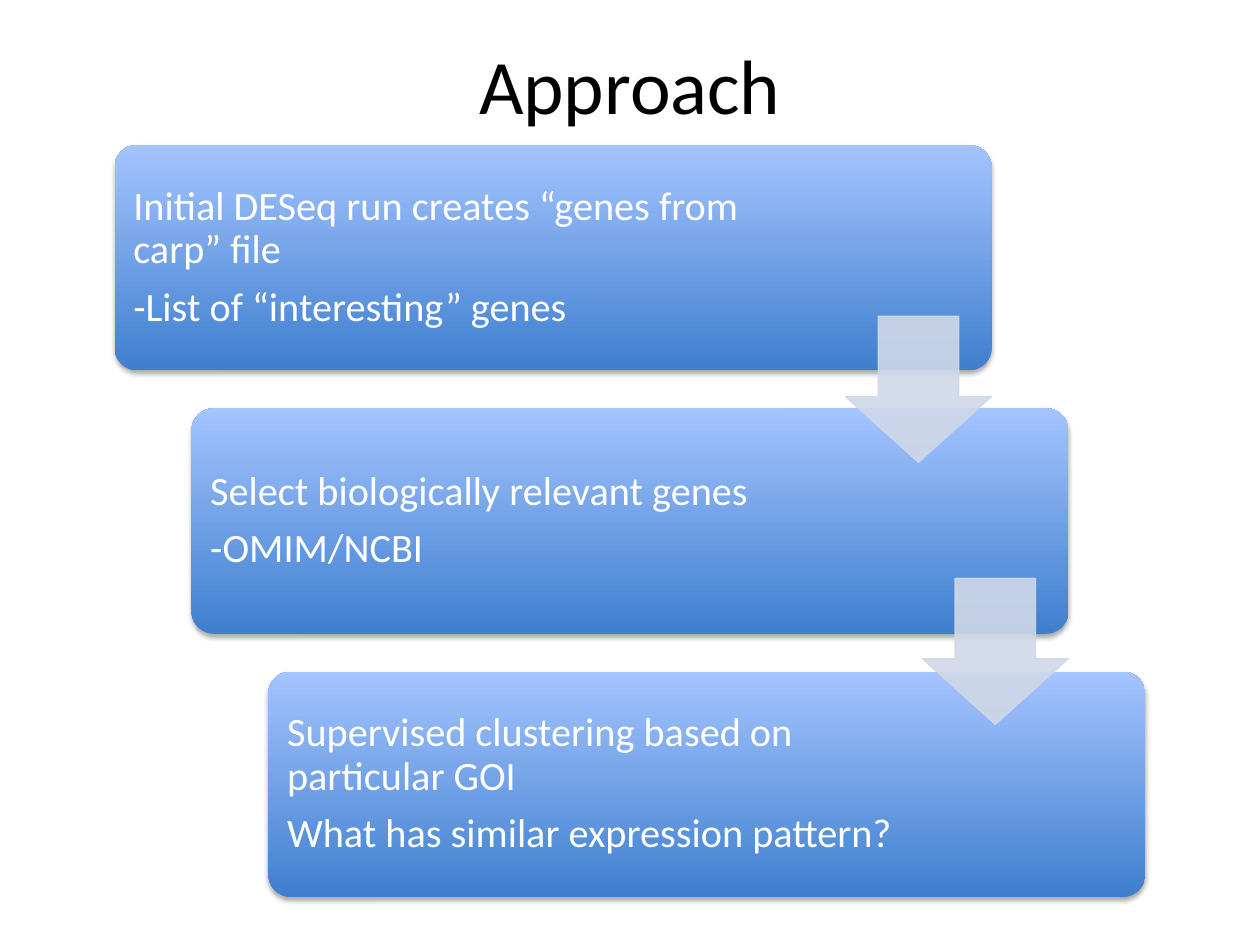
from dataclasses import dataclass

from lxml.etree import SubElement
from pptx import Presentation
from pptx.dml.color import RGBColor
from pptx.enum.shapes import MSO_SHAPE
from pptx.enum.text import MSO_ANCHOR, PP_ALIGN
from pptx.oxml.ns import qn
from pptx.util import Inches, Pt

COLORS = {
    "title": "000000",
    "text": "FFFFFF",
    "box_bottom": "3F7FCE",
    "box_top": "A4C4FF",
    "arrow": "D0D8E8",
    "shadow": "000000",
}
BOX_W, BOX_H = 6.96, 1.79
ARROW = 1.16
STEP_X, STEP_Y = 0.61, 2.09
LEFT, TOP = 0.91, 1.15


@dataclass
class Step:
    lines: list[str]
    text_w: float


STEPS = [
    Step(["Initial DESeq run creates “genes from carp” file",
          "-List of “interesting” genes"], 5.03),
    Step(["Select biologically relevant genes", "-OMIM/NCBI"], 5.08),
    Step(["Supervised clustering based on particular GOI",
          "What has similar expression pattern?"], 5.08),
]


def rgb(name: str) -> RGBColor:
    return RGBColor.from_string(COLORS[name])


def set_attrs(obj, values: dict) -> None:
    for name, value in values.items():
        setattr(obj, name, value)


def add_alpha(color, percent: int) -> None:
    SubElement(color, qn("a:alpha"), val=str(percent * 1000))


def add_text(s, x: float, y: float, w: float, h: float, lines: list[str],
             size: int, color: str, para: dict, inset: float = 0.1) -> None:
    tf = s.shapes.add_textbox(Inches(x), Inches(y), Inches(w), Inches(h)).text_frame
    set_attrs(tf, {"word_wrap": True, "vertical_anchor": MSO_ANCHOR.MIDDLE,
                   "margin_left": Inches(inset), "margin_right": Inches(inset),
                   "margin_top": Inches(inset), "margin_bottom": Inches(inset)})
    for i, line in enumerate(lines):
        p = tf.add_paragraph() if i else tf.paragraphs[0]
        set_attrs(p, para)
        r = p.add_run()
        r.text = line
        set_attrs(r.font, {"name": "Calibri", "size": Pt(size)})
        r.font.color.rgb = rgb(color)


def add_shape(s, kind: MSO_SHAPE, x: float, y: float, w: float, h: float,
              adjustments: list[float]):
    sp = s.shapes.add_shape(kind, Inches(x), Inches(y), Inches(w), Inches(h))
    sp.shadow.inherit = False
    for i, value in enumerate(adjustments):
        sp.adjustments[i] = value
    return sp


def add_step(s, step: Step, x: float, y: float) -> None:
    sp = add_shape(s, MSO_SHAPE.ROUNDED_RECTANGLE, x, y, BOX_W, BOX_H, [0.1])
    sp.line.fill.background()
    sp.fill.gradient()
    sp.fill.gradient_angle = 90
    for stop, name, position in zip(sp.fill.gradient_stops,
                                    ("box_bottom", "box_top"), (0, 1)):
        stop.color.rgb = rgb(name)
        stop.position = position
    effects = sp.element.spPr.find(qn("a:effectLst"))
    shadow = SubElement(effects, qn("a:outerShdw"), blurRad=str(Pt(3.1)),
                        dist=str(Pt(1.8)), dir="5400000", rotWithShape="0")
    add_alpha(SubElement(shadow, qn("a:srgbClr"), val=COLORS["shadow"]), 35)
    add_text(s, x + 0.05, y + 0.05, step.text_w, BOX_H - 0.1, step.lines, 23, "text",
             {"line_spacing": 0.9, "space_after": Pt(8)})


def add_arrow(s, x: float, y: float) -> None:
    sp = add_shape(s, MSO_SHAPE.DOWN_ARROW, x, y, ARROW, ARROW, [0.55, 0.45])
    sp.fill.solid()
    sp.fill.fore_color.rgb = rgb("arrow")
    sp.line.color.rgb = rgb("arrow")
    sp.line.width = Pt(0.75)
    for color in sp.element.spPr.iter(qn("a:srgbClr")):
        add_alpha(color, 90)


def main() -> None:
    prs = Presentation()
    set_attrs(prs, {"slide_width": Inches(10), "slide_height": Inches(7.5)})
    s = prs.slides.add_slide(prs.slide_layouts[6])
    add_text(s, 0.5, 0.04, 9, 1.25, ["Approach"], 44, "title",
             {"alignment": PP_ALIGN.CENTER}, inset=0.05)
    for i, step in enumerate(STEPS):
        add_step(s, step, LEFT + i * STEP_X, TOP + i * STEP_Y)
    for i in range(len(STEPS) - 1):
        add_arrow(s, LEFT + BOX_W - ARROW + i * STEP_X, 2.51 + i * (STEP_Y - 0.01))
    prs.save("out.pptx")


if __name__ == "__main__":
    main()
